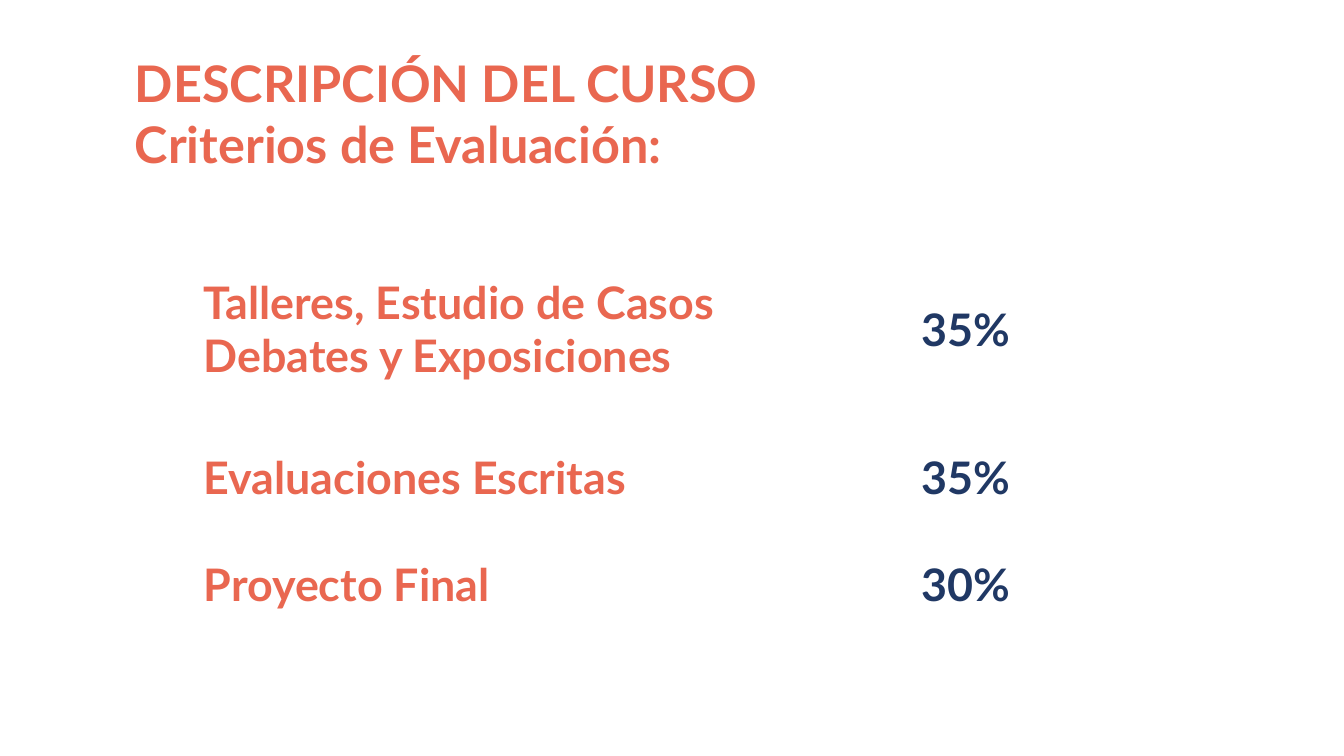
from pptx import Presentation
from pptx.dml.color import RGBColor
from pptx.enum.text import MSO_ANCHOR, PP_ALIGN
from pptx.util import Inches, Pt

COLORS = {"coral": "E96750", "navy": "203864"}
HEADING = ["DESCRIPCIÓN DEL CURSO", "Criterios de Evaluación:"]
CRITERIA = [
    ("Talleres, Estudio de Casos Debates y Exposiciones", "35%", 1.88),
    ("Evaluaciones Escritas", "35%", 1.06),
    ("Proyecto Final", "30%", 1.06),
]
COLUMNS = [(6.84, "coral", PP_ALIGN.LEFT), (1.64, "navy", PP_ALIGN.CENTER)]


def write(paragraph, text, size, color):
    run = paragraph.add_run()
    run.text = text
    for attribute, value in {"name": "Lato", "size": Pt(size), "bold": True}.items():
        setattr(run.font, attribute, value)
    run.font.color.rgb = RGBColor.from_string(COLORS[color])


deck = Presentation()
deck.slide_width, deck.slide_height = Inches(13.33), Inches(7.5)
slide = deck.slides.add_slide(deck.slide_layouts[6])

heading = slide.shapes.add_textbox(
    Inches(1.24), Inches(0.47), Inches(12.09), Inches(1.31)
).text_frame
heading.word_wrap = True
for index, line in enumerate(HEADING):
    paragraph = heading.add_paragraph() if index else heading.paragraphs[0]
    write(paragraph, line, 36, "coral")

table_width = sum(width for width, _, _ in COLUMNS)
table_height = sum(height for _, _, height in CRITERIA)
grading = slide.shapes.add_table(
    len(CRITERIA), len(COLUMNS),
    Inches(1.92), Inches(2.32), Inches(table_width), Inches(table_height),
).table
for attribute, value in {"first_row": False, "horz_banding": False}.items():
    setattr(grading, attribute, value)

for column, (width, _, _) in zip(grading.columns, COLUMNS):
    column.width = Inches(width)
for row, (criterion, weight, height) in zip(grading.rows, CRITERIA):
    row.height = Inches(height)
    for cell, text, (_, color, alignment) in zip(row.cells, (criterion, weight), COLUMNS):
        cell.fill.background()
        cell.vertical_anchor = MSO_ANCHOR.MIDDLE
        paragraph = cell.text_frame.paragraphs[0]
        paragraph.alignment = alignment
        write(paragraph, text, 32, color)

deck.save("out.pptx")
